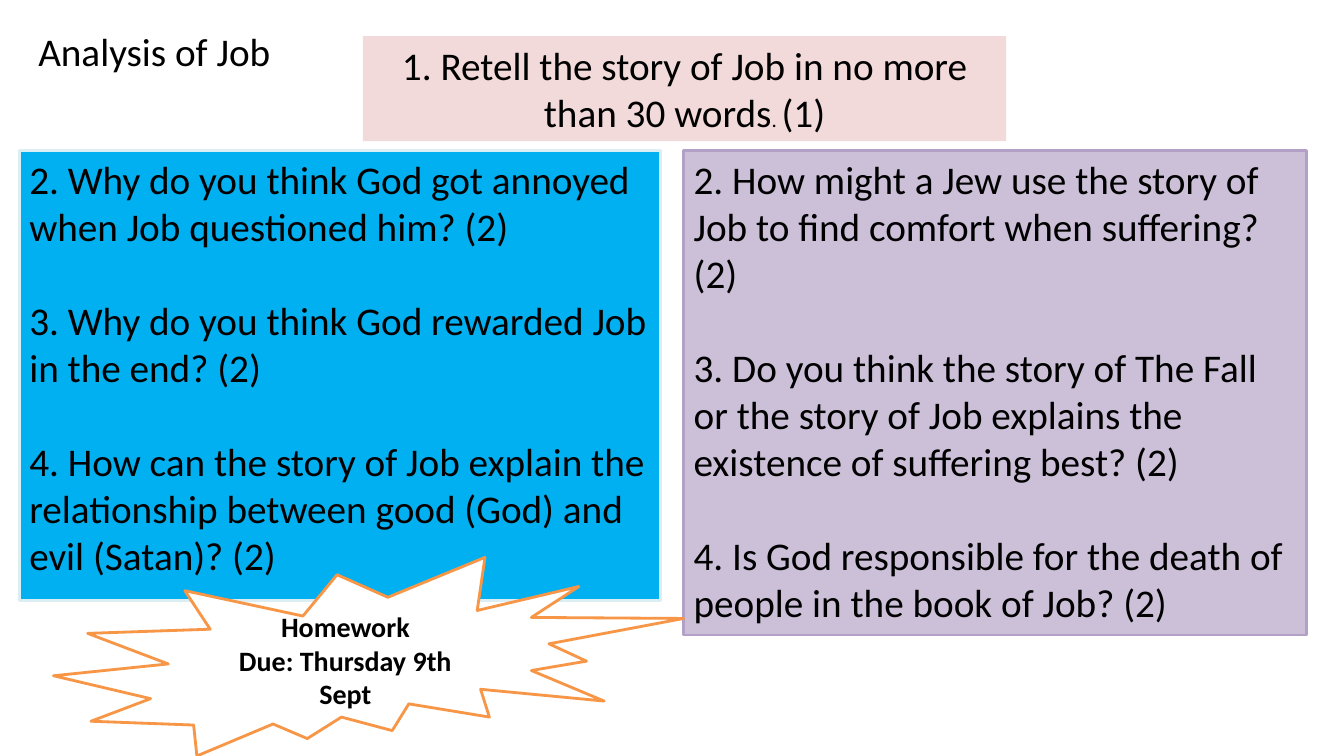
from pptx import Presentation
from pptx.dml.color import RGBColor
from pptx.enum.shapes import MSO_SHAPE
from pptx.enum.text import MSO_ANCHOR, MSO_AUTO_SIZE, PP_ALIGN
from pptx.util import Inches, Pt
from lxml.etree import SubElement
from pptx.oxml.ns import qn

WIDE, HIGH = Inches(13.33), Inches(7.5)
FONT = "Calibri"
BLACK = RGBColor(0, 0, 0)
WHITE = RGBColor(255, 255, 255)
PINK = RGBColor(0xF2, 0xDA, 0xDA)
BLUE = RGBColor(0x00, 0xB0, 0xF0)
PALE = RGBColor(0xDA, 0xEE, 0xF3)
LILAC = RGBColor(0xCC, 0xC0, 0xD9)
PURPLE = RGBColor(0xB2, 0xA0, 0xC7)
ORANGE = RGBColor(0xF7, 0x96, 0x46)

TOP = 19.87
LEFT = [
    "2. Why do you think God got annoyed when Job questioned him? (2)",
    "3. Why do you think God rewarded Job in the end? (2)",
    "4. How can the story of Job explain the relationship between good (God) and evil (Satan)? (2)",
]
RIGHT = [
    "2. How might a Jew use the story of Job to find comfort when suffering? (2)",
    "3. Do you think the story of The Fall or the story of Job explains the existence of suffering best? (2)",
    "4. Is God responsible for the death of people in the book of Job? (2)",
]


def share(x, y, w, h):
    return [int(side * part / 100) for side, part in zip((WIDE, HIGH, WIDE, HIGH), (x, y, w, h))]


def place(shape, area):
    shape.left, shape.top, shape.width, shape.height = share(*area)


def paint(shape, fill, line=None):
    shape.fill.solid()
    shape.fill.fore_color.rgb = fill
    if line is None:
        shape.line.fill.background()
    else:
        shape.line.color.rgb = line
        shape.line.width = Pt(2)


def write(shape, lines, size=28, bold=False, align=PP_ALIGN.LEFT, anchor=MSO_ANCHOR.TOP, gap=0, wrap=True):
    frame = shape.text_frame
    frame.auto_size = MSO_AUTO_SIZE.NONE
    frame.word_wrap = wrap
    frame.vertical_anchor = anchor
    for row, line in enumerate(lines):
        para = frame.add_paragraph() if row else frame.paragraphs[0]
        para.alignment = align
        para.space_before = Pt(gap if row else 0)
        for part in [(line, size)] if isinstance(line, str) else line:
            run = para.add_run()
            run.text = part[0]
            font = run.font
            font.name, font.size, font.bold = FONT, Pt(part[1]), bold
            font.color.rgb = BLACK


def panel(shape, lines, area, fill, line):
    place(shape, area)
    paint(shape, fill, line)
    write(shape, lines, gap=33.6)
    for para in shape.text_frame.paragraphs:
        props = para._p.get_or_add_pPr()
        props.set("marL", "0")
        props.set("indent", "0")
        SubElement(props, qn("a:buNone"))


def block(slide, kind, lines, area, fill, line=None, **form):
    shape = slide.shapes.add_shape(kind, *share(*area))
    shape.shadow.inherit = False
    paint(shape, fill, line)
    write(shape, lines, align=PP_ALIGN.CENTER, **form)


def main():
    deck = Presentation()
    deck.slide_width, deck.slide_height = WIDE, HIGH
    slide = deck.slides.add_slide(deck.slide_layouts[3])
    for spot in list(slide.placeholders)[3:]:
        spot.element.getparent().remove(spot.element)
    title, left, right = slide.placeholders

    place(title, (2.1, 2.93, 19.65, 7.6))
    write(title, ["Analysis of Job"], wrap=False)
    panel(left, LEFT, (1.43, TOP, 47.71, 59.6), BLUE, PALE)
    panel(right, RIGHT, (50.86, TOP, 46.36, 64.13), LILAC, PURPLE)

    task = [("1. Retell the story of Job in no more than 30 words", 28), (". ", 15), ("(1)", 28)]
    block(slide, MSO_SHAPE.RECTANGLE, [task], (27, 4.8, 47.86, 13.87), PINK)
    block(slide, MSO_SHAPE.EXPLOSION2, ["Homework", "Due: Thursday 9th Sept"],
          (3.98, 73.73, 46.89, 26.27), WHITE, ORANGE,
          size=20, bold=True, anchor=MSO_ANCHOR.MIDDLE)
    deck.save("out.pptx")


if __name__ == "__main__":
    main()
